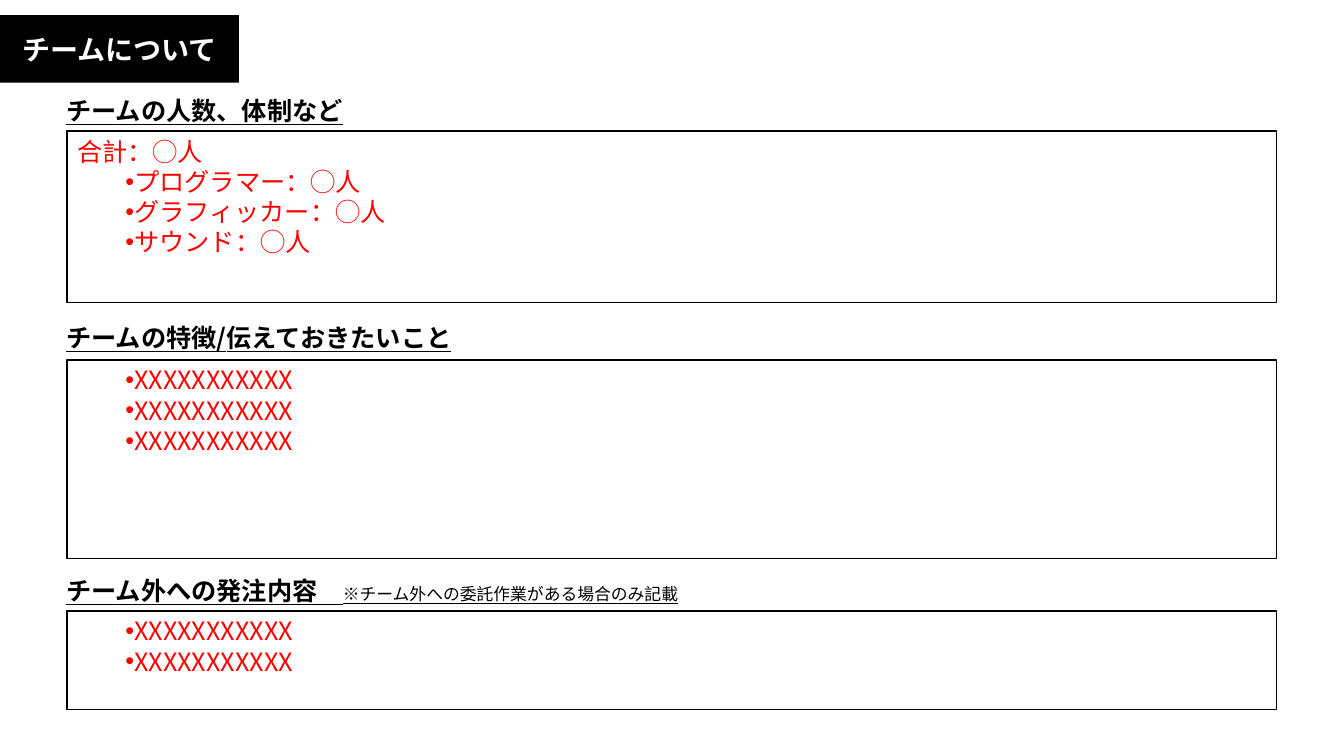
from lxml import etree
from pptx import Presentation
from pptx import util as u
from pptx.dml.color import RGBColor
from pptx.enum import shapes, text
from pptx.oxml.ns import qn

FACE = "Noto Sans CJK JP"
BLACK, WHITE, RED = "000000", "FFFFFF", "FF0000"
COLS, ROWS = 40, 75


def rgb(code):
    return RGBColor.from_string(code)


class Sheet:
    """Style and current slide; places are in columns and rows."""

    def __init__(self, deck):
        self.slide = deck.slides.add_slide(deck.slide_layouts[5])
        self.col = deck.slide_width / COLS
        self.row = deck.slide_height / ROWS

    def place(self, x, y, w, h):
        return [round(n) for n in
                (x * self.col, y * self.row, w * self.col, h * self.row)]

    def style(self, font, size, color, bold=False, line=False):
        font.size, font.bold, font.underline = u.Pt(size), bold, line
        font.color.rgb = rgb(color)
        font.name = FACE
        etree.SubElement(font._rPr, qn("a:ea"), typeface=FACE)

    def title(self, words, *spot):
        tab = self.slide.shapes.title
        tab.left, tab.top, tab.width, tab.height = self.place(*spot)
        tab.fill.solid()
        tab.fill.fore_color.rgb = rgb(BLACK)
        frame = tab.text_frame
        frame.text = words
        frame.auto_size = text.MSO_AUTO_SIZE.NONE
        frame.vertical_anchor = text.MSO_ANCHOR.MIDDLE
        para = frame.paragraphs[0]
        para.alignment = text.PP_ALIGN.CENTER
        self.style(para.font, 20, WHITE, True)

    def head(self, words, note, *spot):
        frame = self.slide.shapes.add_textbox(*self.place(*spot)).text_frame
        frame.word_wrap = True
        frame.auto_size = text.MSO_AUTO_SIZE.SHAPE_TO_FIT_TEXT
        para = frame.paragraphs[0]
        para.add_run().text = words
        if note:
            para.add_run().text = note
            for run, size in zip(para.runs, (18, 12)):
                self.style(run.font, size, BLACK, size == 18, True)
        else:
            self.style(para.font, 18, BLACK, True, True)

    def box(self, lead, items, *spot):
        rect = self.slide.shapes.add_shape(
            shapes.MSO_SHAPE.RECTANGLE, *self.place(*spot))
        rect.shadow.inherit = False
        rect.fill.solid()
        rect.fill.fore_color.rgb = rgb(WHITE)
        rect.line.color.rgb = rgb(BLACK)
        rect.line.width = u.Pt(1)
        frame = rect.text_frame
        frame.word_wrap = True
        frame.vertical_anchor = text.MSO_ANCHOR.TOP
        frame.text = "\n".join(lead + items)
        for i, para in enumerate(frame.paragraphs):
            para.alignment = text.PP_ALIGN.LEFT
            self.style(para.font, 18, RED)
            if i >= len(lead):
                self.bullet(para)

    def bullet(self, para):
        props = para._p.get_or_add_pPr()
        props.set("marL", str(u.Inches(0.2)))
        props.set("indent", str(u.Inches(0.28)))
        mark = etree.Element(qn("a:buChar"), char="•")
        props.insert(0, mark)
        mark.addprevious(etree.Element(qn("a:buFont"), typeface="Arial"))


def main():
    deck = Presentation()
    deck.slide_width, deck.slide_height = u.Inches(13.33), u.Inches(7.5)
    sheet = Sheet(deck)

    # Title tab
    sheet.title("チームについて", 0, 1.5, 7.11, 6.7)

    # Sections: heading, note, lead line, bullets, heading row, box row, box rows
    blank = "XXXXXXXXXXX"
    parts = [
        ("チームの人数、体制など", "", ["合計：◯人"],
         ["プログラマー：◯人", "グラフィッカー：◯人", "サウンド：◯人"], 9, 13, 17),
        ("チームの特徴/伝えておきたいこと", "", [], [blank] * 3, 31.5, 35.7, 19.7),
        ("チーム外への発注内容　", "※チーム外への委託作業がある場合のみ記載",
         [], [blank] * 2, 56.6, 60.6, 9.8),
    ]
    for words, note, lead, items, top, start, tall in parts:
        sheet.head(words, note, 1.68, top, 32.25, 4)
        sheet.box(lead, items, 2, start, 36, tall)

    deck.save("out.pptx")


if __name__ == "__main__":
    main()
